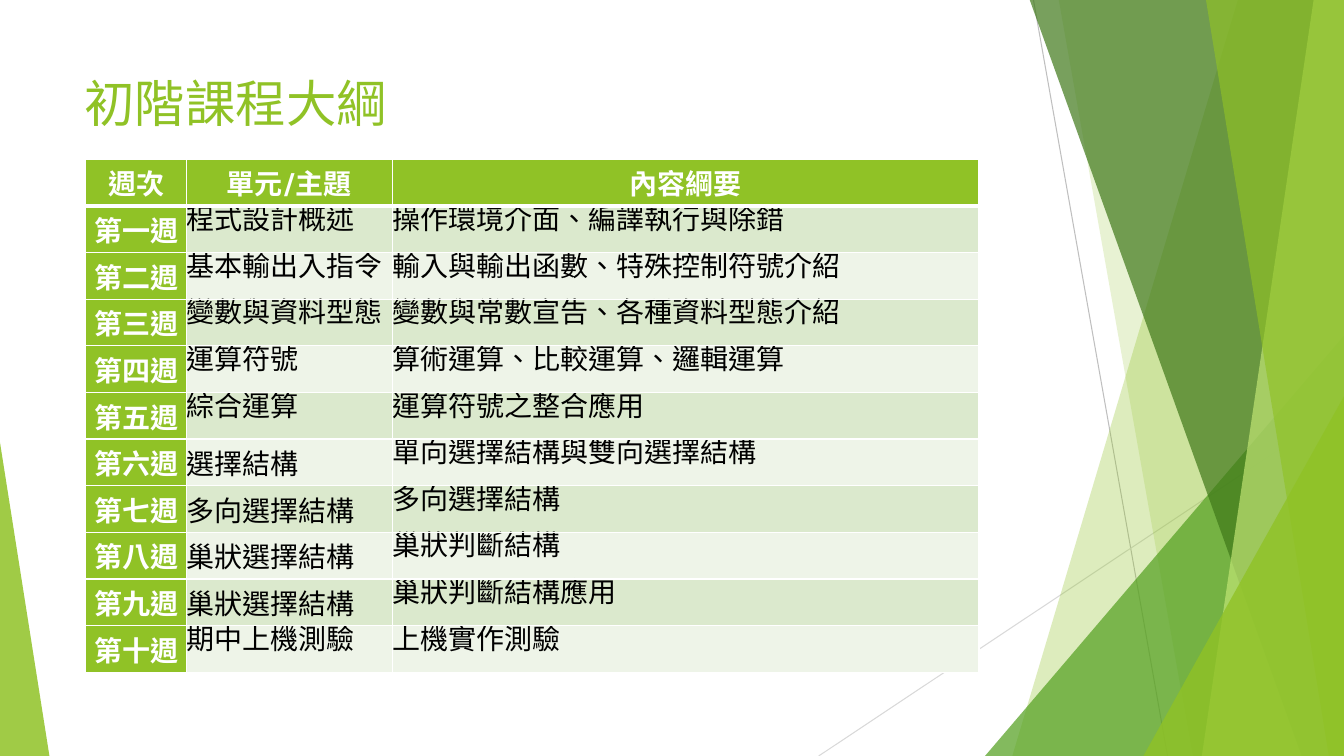
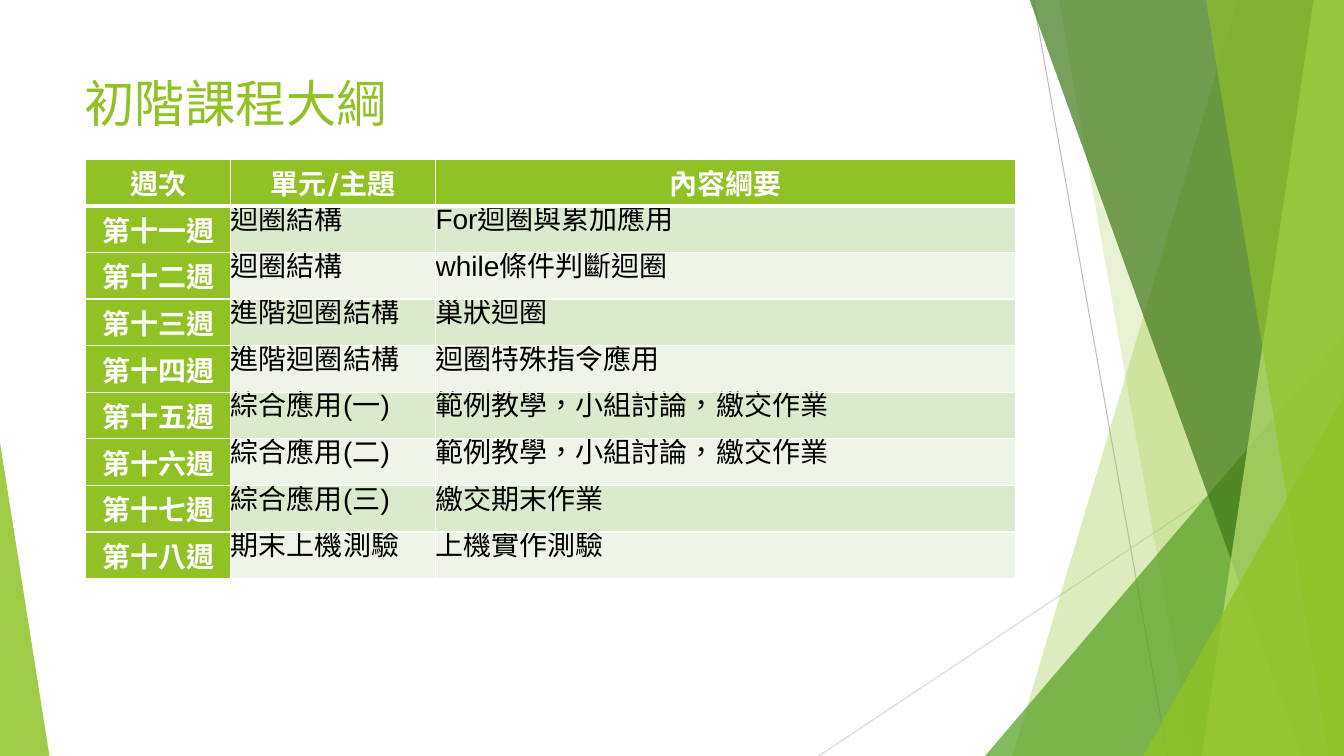
from dataclasses import dataclass

from lxml import etree
from pptx import Presentation
from pptx import util as u
from pptx.dml.color import RGBColor
from pptx.enum import lang, shapes, text
from pptx.oxml import ns

WHITE = RGBColor(0xFF, 0xFF, 0xFF)
BLACK = RGBColor(0x00, 0x00, 0x00)
LIME = RGBColor(0x90, 0xC2, 0x26)
GREEN = RGBColor(0x54, 0xA0, 0x21)
FOREST = RGBColor(0x3F, 0x78, 0x19)
PALE_LIME = RGBColor(0xC0, 0xE4, 0x74)
ROW_TINTS = (RGBColor(0xDB, 0xE9, 0xCD), RGBColor(0xEE, 0xF4, 0xE8))
GREY = RGBColor(0xBF, 0xBF, 0xBF)
LIGHT_GREY = RGBColor(0xD9, 0xD9, 0xD9)

TITLE = "初階課程大綱"
TITLE_FONT = "Karla"
HEADINGS = ("週次", "單元/主題", "內容綱要")
WIDTH, HEIGHT = 13.33, 7.5
BAND_TOP = -0.01


@dataclass(frozen=True)
class Ray:
    start: tuple[float, float]
    end: tuple[float, float]
    color: RGBColor


@dataclass(frozen=True)
class Band:
    top_left: float
    bottom_left: float
    color: RGBColor
    opacity: int


@dataclass(frozen=True)
class Wedge:
    left: float
    top: float
    width: float
    apex: float
    color: RGBColor
    opacity: int


@dataclass(frozen=True)
class Lesson:
    week: str
    topic: str
    outline: str
    tight_topic: bool = True


@dataclass(frozen=True)
class Syllabus:
    lessons: tuple[Lesson, ...]
    columns: tuple[float, float, float]
    height: float
    font: str
    align: text.PP_ALIGN


RAYS = (
    Ray((10.25, 0), (11.58, HEIGHT), GREY),
    Ray((WIDTH, 4.03), (8.12, HEIGHT), LIGHT_GREY),
)
DECORATIONS = (
    Band(12.28, 10.04, LIME, 30),
    Band(10.5, 11.83, LIME, 20),
    Wedge(9.77, 3.33, 3.56, 1, GREEN, 72),
    Band(10.21, 12.91, FOREST, 70),
    Band(13.03, 11.92, PALE_LIME, 70),
    Band(11.96, 13.18, LIME, 65),
    Wedge(11.34, 3.93, 1.99, 1, LIME, 80),
    Wedge(0, 4.39, 0.49, 0, LIME, 85),
)

SYLLABUSES = (
    Syllabus(
        (
            Lesson("第一週", "程式設計概述", "操作環境介面、編譯執行與除錯"),
            Lesson("第二週", "基本輸出入指令", "輸入與輸出函數、特殊控制符號介紹"),
            Lesson("第三週", "變數與資料型態", "變數與常數宣告、各種資料型態介紹"),
            Lesson("第四週", "運算符號", "算術運算、比較運算、邏輯運算"),
            Lesson("第五週", "綜合運算", "運算符號之整合應用"),
            Lesson("第六週", "選擇結構", "單向選擇結構與雙向選擇結構", False),
            Lesson("第七週", "多向選擇結構", "多向選擇結構", False),
            Lesson("第八週", "巢狀選擇結構", "巢狀判斷結構", False),
            Lesson("第九週", "巢狀選擇結構", "巢狀判斷結構應用", False),
            Lesson("第十週", "期中上機測驗", "上機實作測驗"),
        ),
        (1, 2.04, 5.82), 5.09, TITLE_FONT, text.PP_ALIGN.LEFT,
    ),
    Syllabus(
        (
            Lesson("第十一週", "迴圈結構", "For迴圈與累加應用"),
            Lesson("第十二週", "迴圈結構", "while條件判斷迴圈"),
            Lesson("第十三週", "進階迴圈結構", "巢狀迴圈"),
            Lesson("第十四週", "進階迴圈結構", "迴圈特殊指令應用"),
            Lesson("第十五週", "綜合應用(一)", "範例教學，小組討論，繳交作業"),
            Lesson("第十六週", "綜合應用(二)", "範例教學，小組討論，繳交作業"),
            Lesson("第十七週", "綜合應用(三)", "繳交期末作業"),
            Lesson("第十八週", "期末上機測驗", "上機實作測驗"),
        ),
        (1.44, 2.03, 5.75), 4.16, "Arial", text.PP_ALIGN.JUSTIFY,
    ),
)


def draw_ray(page, ray: Ray) -> None:
    ends = [u.Inches(value) for value in (*ray.start, *ray.end)]
    line = page.shapes.add_connector(shapes.MSO_CONNECTOR.STRAIGHT, *ends)
    line.line.color.rgb = ray.color
    line.line.width = u.Pt(0.75)
    etree.SubElement(line._element.spPr, ns.qn("a:effectLst"))


def paint(shape, color: RGBColor, opacity: int) -> None:
    shape.shadow.inherit = False
    shape.line.fill.background()
    shape.fill.solid()
    shape.fill.fore_color.rgb = color
    tone = shape._element.spPr.find(ns.qn("a:solidFill"))[0]
    etree.SubElement(tone, ns.qn("a:alpha")).set("val", str(opacity * 1000))


def draw_band(page, band: Band) -> None:
    corners = [
        (u.Inches(x), u.Inches(y))
        for x, y in (
            (band.top_left, BAND_TOP), (WIDTH, BAND_TOP),
            (WIDTH, HEIGHT), (band.bottom_left, HEIGHT),
        )
    ]
    builder = page.shapes.build_freeform(*corners[0])
    builder.add_line_segments(corners[1:], close=True)
    paint(builder.convert_to_shape(), band.color, band.opacity)


def draw_wedge(page, wedge: Wedge) -> None:
    shape = page.shapes.add_shape(
        shapes.MSO_SHAPE.ISOSCELES_TRIANGLE,
        u.Inches(wedge.left), u.Inches(wedge.top),
        u.Inches(wedge.width), u.Inches(HEIGHT - wedge.top),
    )
    shape.adjustments[0] = wedge.apex
    paint(shape, wedge.color, wedge.opacity)


def format_text(para, font: str, size: int, color: RGBColor, bold: bool = False) -> None:
    for span in para.runs:
        span.font.name = font
        span.font.size = u.Pt(size)
        span.font.bold = bold
        span.font.color.rgb = color
        span.font.language_id = lang.MSO_LANGUAGE_ID.TRADITIONAL_CHINESE


def draw_title(page) -> None:
    box = page.shapes.add_textbox(u.Inches(0.74), u.Inches(0.67), u.Inches(9.4), u.Inches(1.44))
    box.text_frame.word_wrap = True
    box.text_frame.text = TITLE
    format_text(box.text_frame.paragraphs[0], TITLE_FONT, 36, LIME)


def set_borders(cell, bottom: float) -> None:
    properties = cell._tc.get_or_add_tcPr()
    for side, width in (("L", 1), ("R", 1), ("T", 1), ("B", bottom)):
        edge = etree.SubElement(properties, ns.qn(f"a:ln{side}"), w=str(u.Pt(width)))
        fill = etree.SubElement(edge, ns.qn("a:solidFill"))
        etree.SubElement(fill, ns.qn("a:srgbClr"), val=str(WHITE))


def fill_cell(cell, words: str, fill: RGBColor, bottom: float = 1):
    set_borders(cell, bottom)
    cell.fill.solid()
    cell.fill.fore_color.rgb = fill
    cell.margin_left = cell.margin_right = cell.margin_top = cell.margin_bottom = 0
    cell.vertical_anchor = text.MSO_ANCHOR.MIDDLE
    cell.text_frame.text = words
    return cell.text_frame.paragraphs[0]


def fill_label(cell, words: str, font: str, bottom: float = 1) -> None:
    para = fill_cell(cell, words, LIME, bottom)
    para.alignment = text.PP_ALIGN.CENTER
    format_text(para, font, 20, WHITE, bold=True)


def fill_body(cell, words: str, syllabus: Syllabus, tint: RGBColor, tight: bool) -> None:
    para = fill_cell(cell, words, tint)
    para.alignment = syllabus.align
    if tight:
        para.line_spacing = u.Pt(12)
    format_text(para, syllabus.font, 20, BLACK)


def draw_syllabus(page, syllabus: Syllabus) -> None:
    table = page.shapes.add_table(
        len(syllabus.lessons) + 1, len(HEADINGS),
        u.Inches(0.85), u.Inches(1.58),
        u.Inches(sum(syllabus.columns)), u.Inches(syllabus.height),
    ).table
    table.horz_banding = False
    for column, width in zip(table.columns, syllabus.columns):
        column.width = u.Inches(width)
    for index, heading in enumerate(HEADINGS):
        fill_label(table.cell(0, index), heading, TITLE_FONT, bottom=3)
    for row, lesson in enumerate(syllabus.lessons, start=1):
        tint = ROW_TINTS[(row - 1) % 2]
        fill_label(table.cell(row, 0), lesson.week, syllabus.font)
        fill_body(table.cell(row, 1), lesson.topic, syllabus, tint, lesson.tight_topic)
        fill_body(table.cell(row, 2), lesson.outline, syllabus, tint, True)


def draw_backdrop(page) -> None:
    for ray in RAYS:
        draw_ray(page, ray)
    for decoration in DECORATIONS:
        if isinstance(decoration, Band):
            draw_band(page, decoration)
        else:
            draw_wedge(page, decoration)


def main() -> None:
    deck = Presentation()
    deck.slide_width = u.Inches(WIDTH)
    deck.slide_height = u.Inches(HEIGHT)
    for syllabus in SYLLABUSES:
        page = deck.slides.add_slide(deck.slide_layouts[6])
        draw_backdrop(page)
        draw_title(page)
        draw_syllabus(page, syllabus)
    deck.save("out.pptx")


if __name__ == "__main__":
    main()
